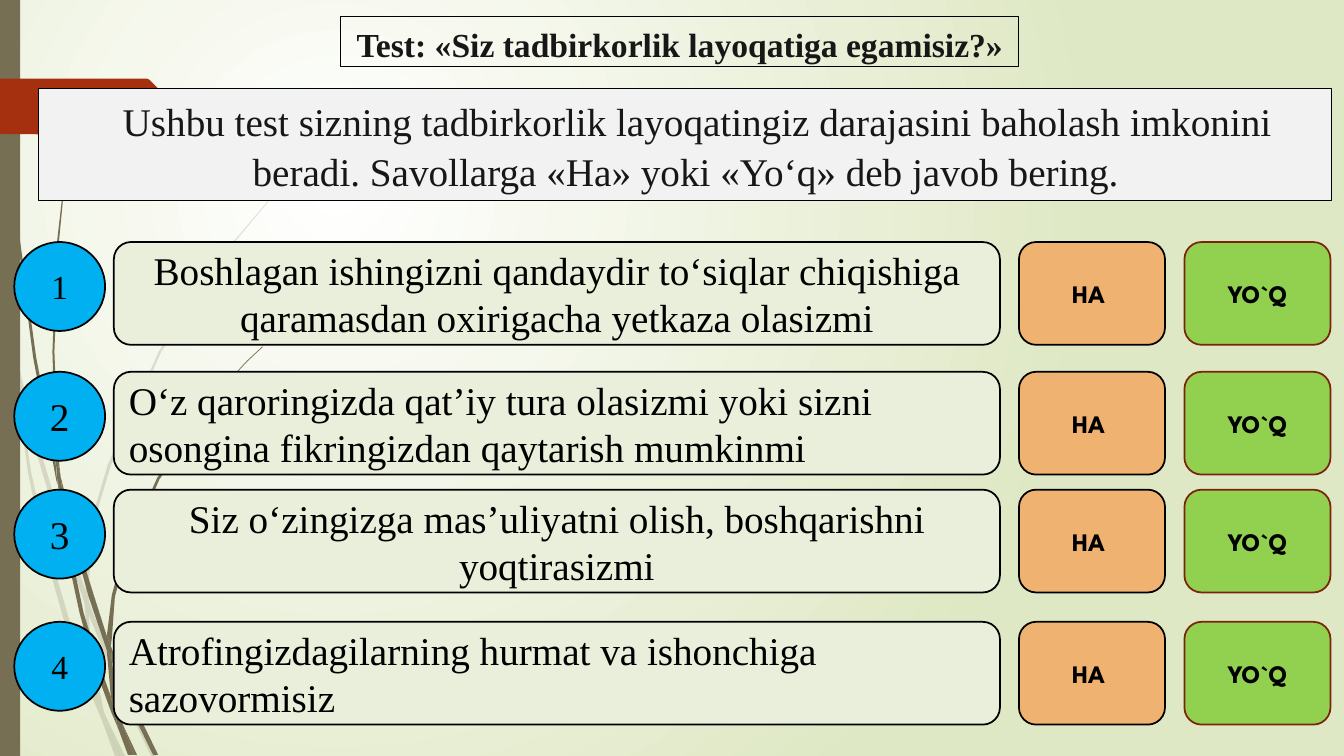
import pptx
import pptx.dml.color
import pptx.enum.shapes
import pptx.enum.text
import pptx.oxml
import pptx.oxml.ns
import pptx.util
from pptx.util import Cm

SHAPE = pptx.enum.shapes.MSO_SHAPE
ANCHOR = pptx.enum.text.MSO_ANCHOR
ALIGN = pptx.enum.text.PP_ALIGN
SERIF = "Times New Roman"
OLIVE = "766F54"
OUTLINE_UNIT = Cm(0.0254)

PALE_STEMS = [
    [(11, 350), (9, 322), (0, 282), (0, 299), (10, 344)],
    [(58, 522), (84, 599), (85, 586), (62, 520), (36, 433), (14, 345), (17, 376), (36, 449)],
    [(92, 607), (88, 596), (88, 610), (123, 694), (150, 750), (155, 750), (127, 692)],
    [(119, 750), (124, 750), (105, 711)],
    [(93, 683), (70, 619), (48, 544), (31, 469), (17, 376), (11, 350), (28, 470), (44, 546),
     (65, 621), (92, 693), (101, 714), (99, 707)],
    [(84, 599), (87, 646), (93, 683), (96, 692), (105, 711), (103, 706), (91, 646), (88, 610), (88, 608)],
    [(88, 584), (92, 522), (110, 462), (160, 349), (229, 245), (268, 198), (290, 175), (312, 154),
     (312, 153), (289, 175), (268, 197), (228, 244), (158, 348), (107, 461), (89, 522), (85, 584),
     (85, 586), (88, 596)],
    [(101, 714), (114, 750), (119, 750)],
    [(88, 608), (88, 610), (88, 596), (85, 586), (84, 599)],
    [(96, 692), (93, 683), (99, 707), (101, 714), (119, 750), (105, 711)],
]

DARK_STEMS = [
    [(7, 110), (17, 233), (33, 355), (56, 477), (57, 481), (55, 457), (55, 453), (36, 355),
     (19, 232), (8, 109), (5, 48), (4, 0), (3, 0), (4, 48)],
    [(88, 592), (106, 645), (106, 633), (106, 631), (93, 590), (75, 532), (60, 472), (64, 505)],
    [(113, 649), (110, 641), (111, 656), (132, 708), (152, 749), (157, 749), (136, 706)],
    [(110, 691), (98, 657), (83, 608), (72, 556), (64, 505), (57, 477), (68, 557), (79, 608),
     (93, 659), (111, 708), (117, 722), (116, 717)],
    [(60, 472), (58, 453), (54, 349), (58, 245), (63, 193), (70, 141), (62, 193), (56, 245),
     (52, 349), (55, 449)],
    [(133, 749), (136, 749), (122, 719)],
    [(57, 477), (64, 505), (60, 472), (55, 449), (55, 453)],
    [(111, 633), (114, 592), (125, 552), (158, 476), (205, 406), (231, 374), (245, 359), (261, 344),
     (260, 344), (245, 358), (231, 373), (204, 405), (156, 474), (122, 551), (111, 590), (106, 631),
     (110, 641)],
    [(117, 722), (127, 749), (131, 749)],
    [(106, 645), (110, 691), (116, 706), (122, 719), (121, 716), (111, 656), (109, 651)],
    [(106, 645), (109, 651), (111, 656), (110, 641), (106, 631), (106, 633)],
    [(116, 706), (110, 691), (116, 717), (117, 722), (130, 749), (133, 749), (122, 719)],
]

RIBBON = [(173, 108), (148, 133), (146, 134), (136, 134), (0, 133), (0, 78),
          (146, 78), (148, 79), (173, 104), (174, 106)]

QUESTIONS = [
    (6.1, "1", 24, ALIGN.CENTER,
     "Boshlagan ishingizni qandaydir to‘siqlar chiqishiga qaramasdan oxirigacha yetkaza olasizmi"),
    (9.37, "2", 28, ALIGN.LEFT,
     "O‘z qaroringizda qat’iy tura olasizmi yoki sizni osongina fikringizdan qaytarish mumkinmi"),
    (12.34, "3", 28, ALIGN.CENTER,
     "Siz o‘zingizga mas’uliyatni olish, boshqarishni yoqtirasizmi"),
    (15.67, "4", 24, ALIGN.LEFT,
     "Atrofingizdagilarning hurmat va ishonchiga sazovormisiz"),
]


def rgb(value):
    return pptx.dml.color.RGBColor.from_string(value)


def paint(shape, fill=None, line=None, line_width=1.25):
    shape.shadow.inherit = False
    if fill:
        shape.fill.solid()
        shape.fill.fore_color.rgb = rgb(fill)
    else:
        shape.fill.background()
    if line:
        shape.line.color.rgb = rgb(line)
        shape.line.width = pptx.util.Pt(line_width)
    else:
        shape.line.fill.background()


def add_outline(slide, points, fill, opacity=100):
    builder = slide.shapes.build_freeform(*points[0], scale=OUTLINE_UNIT)
    builder.add_line_segments(points[1:], close=True)
    outline = builder.convert_to_shape()
    paint(outline, fill)
    if opacity < 100:
        color = outline.fill._xPr.find(".//" + pptx.oxml.ns.qn("a:srgbClr"))
        alpha = color.makeelement(pptx.oxml.ns.qn("a:alpha"), {"val": str(opacity * 1000)})
        color.append(alpha)


def add_panel(slide, kind, box, fill=None, line=None, line_width=1.25):
    panel = slide.shapes.add_shape(kind, *(Cm(length) for length in box))
    paint(panel, fill, line, line_width)
    return panel


def write(panel, text, size, font=SERIF, color="000000", bold=False, align=ALIGN.CENTER):
    panel.text_frame.text = text
    panel.text_frame.word_wrap = True
    panel.text_frame.vertical_anchor = ANCHOR.MIDDLE
    paragraph = panel.text_frame.paragraphs[0]
    paragraph.alignment = align
    paragraph.font.name = font
    paragraph.font.size = pptx.util.Pt(size)
    paragraph.font.bold = bold
    paragraph.font.color.rgb = rgb(color)
    return paragraph


def add_heading(slide, box, text, size, space_after, indent, fill=None, bold=False, wrap=True):
    heading = add_panel(slide, SHAPE.RECTANGLE, box, fill, "000000", 0.75)
    paragraph = write(heading, text, size, color="181717", bold=bold)
    paragraph.line_spacing = 1.07
    paragraph.space_after = pptx.util.Pt(space_after)
    properties = paragraph._p.get_or_add_pPr()
    properties.set("marL", str(Cm(0.03)))
    properties.set("indent", str(Cm(indent)))
    frame = heading.text_frame
    frame.vertical_anchor = ANCHOR.TOP
    frame.word_wrap = wrap
    frame.auto_size = pptx.enum.text.MSO_AUTO_SIZE.SHAPE_TO_FIT_TEXT


def add_question(slide, top, number, number_size, align, question):
    badge = add_panel(slide, SHAPE.OVAL, (0.36, top, 2.29, 2.24), "00B0F0", "000000")
    write(badge, number, number_size)
    card = add_panel(slide, SHAPE.ROUNDED_RECTANGLE, (2.87, top, 22.33, 2.59), "EAEFDB", "000000")
    write(card, question, 28, align=align)
    for left, answer, fill, line in ((25.68, "HA ", "F0B270", "000000"),
                                     (29.85, "YO`Q", "92D050", "7A240C")):
        button = add_panel(slide, SHAPE.ROUNDED_RECTANGLE, (left, top, 3.68, 2.59), fill, line)
        write(button, answer, 18, font="League Spartan", bold=True)


def set_background(slide):
    fill = slide.background.fill
    fill.gradient()
    for stop, color, position in zip(fill.gradient_stops, ("FFFFFF", "DFE8C4"), (0, 1)):
        stop.color.rgb = rgb(color)
        stop.position = position
    gradient = fill._xPr.find(pptx.oxml.ns.qn("a:gradFill"))
    linear = gradient.find(pptx.oxml.ns.qn("a:lin"))
    radial = pptx.oxml.parse_xml(
        f'<a:path {pptx.oxml.ns.nsdecls("a")} path="circle">'
        '<a:fillToRect l="50000" t="50000" r="100000" b="100000"/></a:path>')
    gradient.replace(linear, radial)


def main():
    deck = pptx.Presentation()
    deck.slide_width, deck.slide_height = Cm(33.87), Cm(19.05)
    slide = deck.slides.add_slide(deck.slide_layouts[6])
    set_background(slide)
    for stem in PALE_STEMS:
        add_outline(slide, stem, OLIVE, 20)
    for stem in DARK_STEMS:
        add_outline(slide, stem, OLIVE)
    add_panel(slide, SHAPE.RECTANGLE, (0, 0, 0.51, 19.05), OLIVE)
    add_outline(slide, RIBBON, "A53010")
    add_heading(slide, (8.59, 0.41, 17.09, 1.27),
                "Test: «Siz tadbirkorlik layoqatiga egamisiz?»",
                24, 5.4, -0.03, bold=True, wrap=False)
    add_heading(slide, (0.97, 2.24, 32.59, 2.82),
                "Ushbu test sizning tadbirkorlik layoqatingiz darajasini baholash imkonini "
                "beradi. Savollarga «Ha» yoki «Yo‘q» deb javob bering.",
                28, 2.6, 0.58, fill="F2F2F2")
    for question in QUESTIONS:
        add_question(slide, *question)
    deck.save("out.pptx")


if __name__ == "__main__":
    main()
